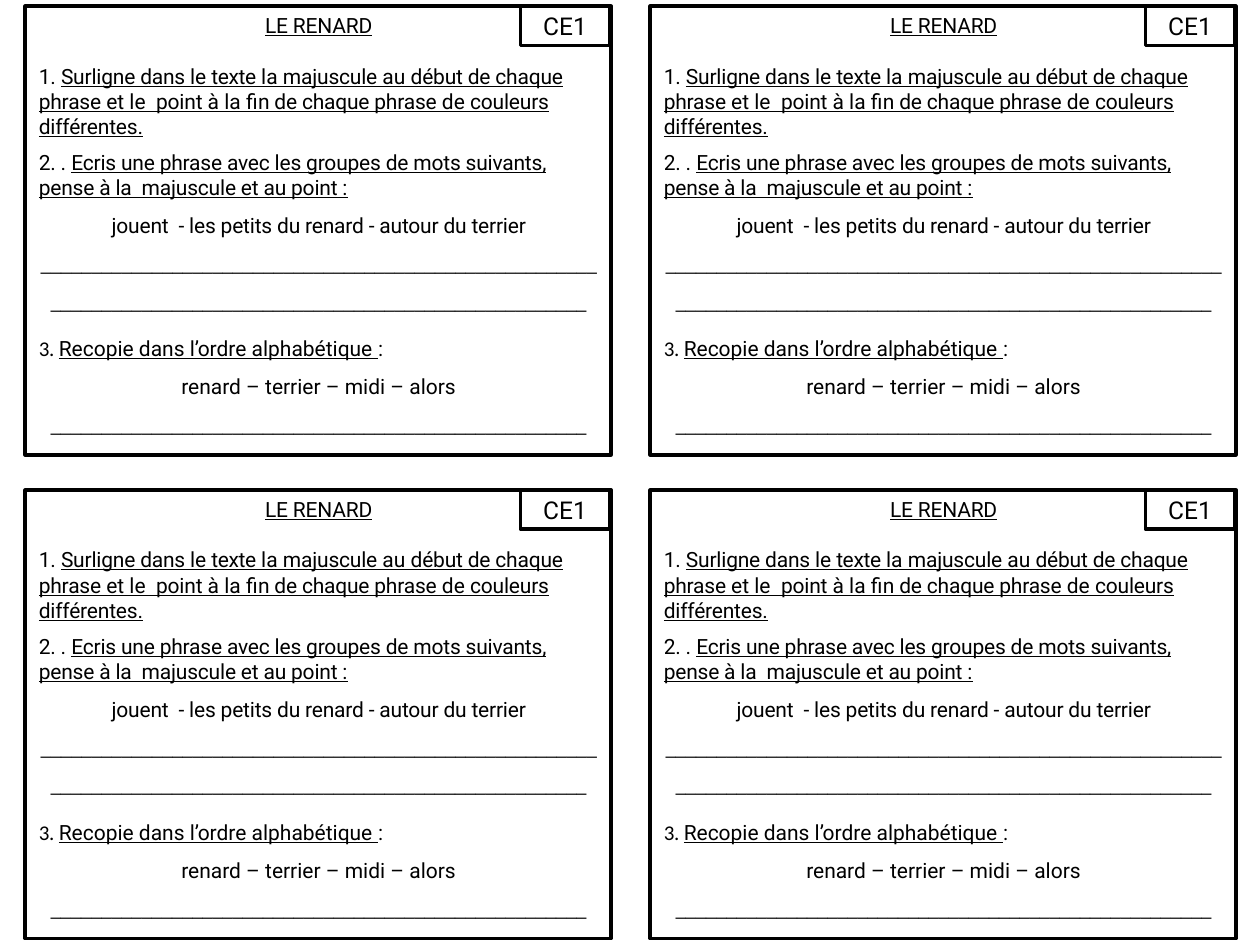
from dataclasses import dataclass
from itertools import product

from pptx import Presentation
from pptx.dml.color import RGBColor
from pptx.enum.shapes import MSO_SHAPE
from pptx.enum.text import MSO_ANCHOR, MSO_AUTO_SIZE, PP_ALIGN
from pptx.util import Inches, Pt

BLACK = "000000"
WHITE = "FFFFFF"
CARD_WIDTH = 4.65
CARD_HEIGHT = 3.56
BADGE_WIDTH = 0.71
BADGE_HEIGHT = 0.31
CARD_LEFTS = (0.2, 5.16)
CARD_TOPS = (3.89, 0.05)


@dataclass(frozen=True)
class Span:
    text: str
    spacing: float = -0.1
    underline: bool = False
    font: str = "Roboto"


@dataclass(frozen=True)
class Line:
    spans: tuple
    centred: bool = False
    line_spacing: float = 1.0
    space_before: float = 0


def underlined(text: str, spacing: float = -0.1) -> Span:
    return Span(text, spacing, underline=True)


def answer_rule(length: int) -> Span:
    return Span("_" * length, -0.2, font="Calibri")


CARD_LINES = (
    Line((underlined("LE RENARD"),), centred=True),
    Line(
        (
            Span("1. "),
            underlined("Surligne dans le "),
            underlined("texte ", -0.2),
            underlined("la ", 0),
            underlined("majuscule "),
            underlined("au ", 0),
            underlined("début de chaque phrase "),
            underlined("et le  ", 0),
            underlined("point "),
            underlined("à la ", 0),
            underlined("fin de chaque phrase "),
            underlined("de ", 0),
            underlined("couleurs"),
            underlined(" ", 1),
            underlined("différentes."),
        ),
        space_before=14.5,
    ),
    Line(
        (
            Span("2. . "),
            underlined(
                "Ecris une phrase avec les groupes de mots suivants, "
                "pense à la  majuscule et au point :"
            ),
        ),
        space_before=6.2,
    ),
    Line(
        (
            Span("jouent  - les petits du renard - autour du terrier "),
            answer_rule(108),
        ),
        centred=True,
        line_spacing=1.5,
    ),
    Line(
        (
            Span("3. ", -0.2, font="Calibri"),
            underlined("Recopie dans l’ordre alphabétique ", 0),
            Span(":", 0),
        ),
        line_spacing=1.5,
        space_before=5.7,
    ),
    Line(
        (Span("renard – terrier – midi – alors", 0),),
        centred=True,
        line_spacing=1.5,
        space_before=0.1,
    ),
    Line((answer_rule(53),), centred=True, line_spacing=1.5, space_before=0.1),
)


def colour(value: str) -> RGBColor:
    return RGBColor.from_string(value)


def add_span(para, text: str, *, size: float = 12, font: str = "Roboto",
             underline: bool = False, spacing: float = 0) -> None:
    span = para.add_run()
    span.text = text
    span.font.size = Pt(size)
    span.font.name = font
    span.font.underline = underline
    span.font.color.rgb = colour(BLACK)
    if spacing:
        span._r.get_or_add_rPr().set("spc", str(round(spacing * 100)))


def add_frame(page, left: float, top: float, width: float, height: float):
    frame = page.shapes.add_shape(
        MSO_SHAPE.RECTANGLE, Inches(left), Inches(top), Inches(width), Inches(height)
    )
    frame.shadow.inherit = False
    frame.fill.solid()
    frame.fill.fore_color.rgb = colour(WHITE)
    frame.line.color.rgb = colour(BLACK)
    frame.line.width = Pt(2)
    return frame


def add_exercises(page, left: float, top: float) -> None:
    box = page.shapes.add_textbox(
        Inches(left), Inches(top), Inches(CARD_WIDTH), Inches(4.1)
    )
    body = box.text_frame
    body.word_wrap = True
    body.auto_size = MSO_AUTO_SIZE.SHAPE_TO_FIT_TEXT
    for index, line in enumerate(CARD_LINES):
        para = body.add_paragraph() if index else body.paragraphs[0]
        para.alignment = PP_ALIGN.CENTER if line.centred else PP_ALIGN.LEFT
        para.line_spacing = line.line_spacing
        para.space_before = Pt(line.space_before)
        para._p.get_or_add_pPr().set("marL", str(Inches(0.01)))
        for span in line.spans:
            add_span(para, span.text, font=span.font,
                     underline=span.underline, spacing=span.spacing)


def add_badge(page, left: float, top: float) -> None:
    badge = add_frame(page, left, top, BADGE_WIDTH, BADGE_HEIGHT)
    badge.text_frame.vertical_anchor = MSO_ANCHOR.MIDDLE
    para = badge.text_frame.paragraphs[0]
    para.alignment = PP_ALIGN.CENTER
    add_span(para, "CE1", size=14)


def add_card(page, left: float, top: float) -> None:
    add_frame(page, left, top, CARD_WIDTH, CARD_HEIGHT)
    add_exercises(page, left, top)
    add_badge(page, left + CARD_WIDTH - BADGE_WIDTH - 0.01, top)


def main() -> None:
    deck = Presentation()
    deck.slide_width = Inches(10)
    deck.slide_height = Inches(7.5)
    page = deck.slides.add_slide(deck.slide_layouts[6])
    for left, top in product(CARD_LEFTS, CARD_TOPS):
        add_card(page, left, top)
    deck.save("out.pptx")


if __name__ == "__main__":
    main()
